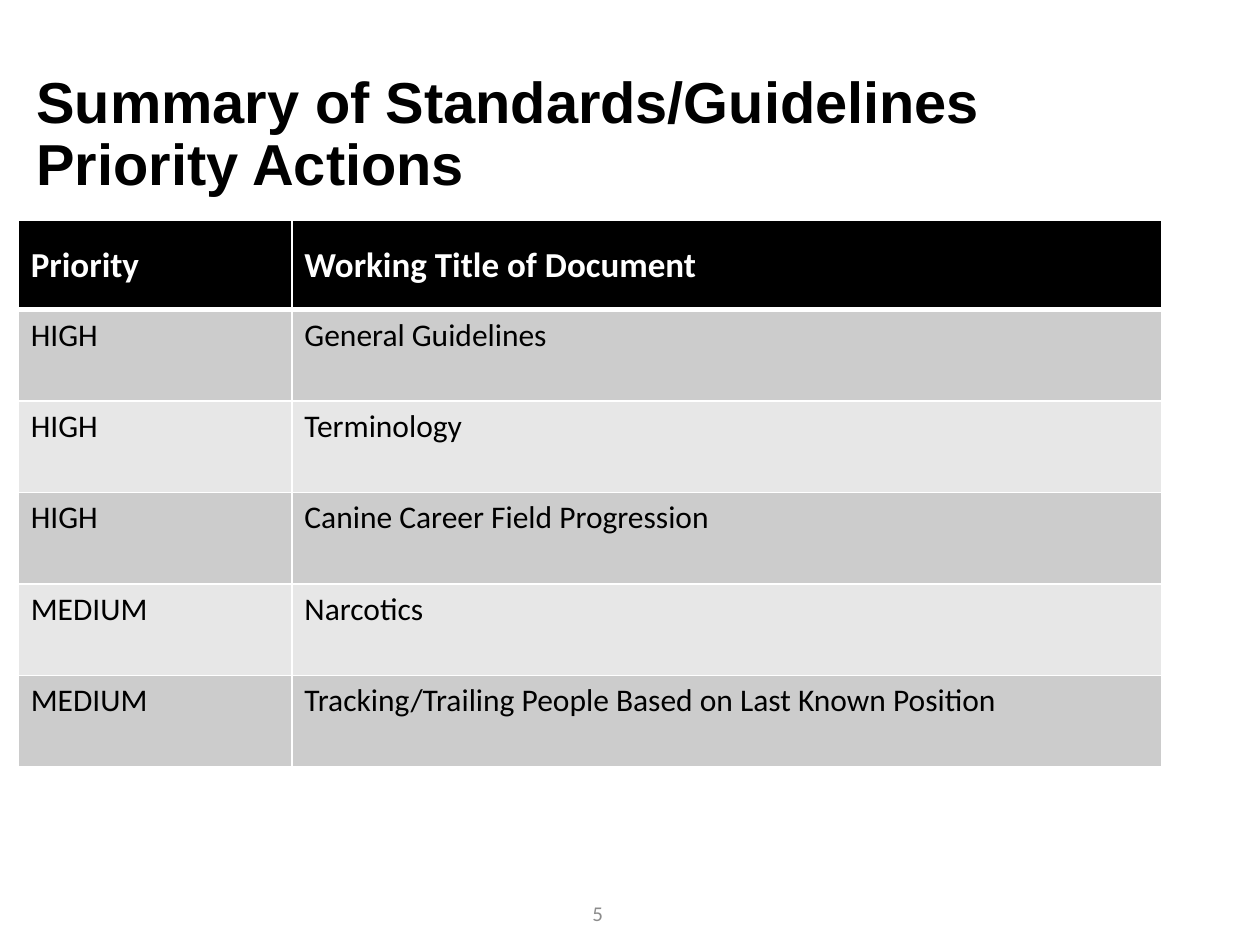
import pptx
import pptx.dml.color
import pptx.enum.text
import pptx.oxml
import pptx.oxml.ns
import pptx.util

Pt = pptx.util.Pt
ALIGN = pptx.enum.text.PP_ALIGN
ANCHOR = pptx.enum.text.MSO_ANCHOR

HEADER = ("Priority", "Working Title of Document")
ACTIONS = [
    ("HIGH", "General Guidelines"),
    ("HIGH", "Terminology"),
    ("HIGH", "Canine Career Field Progression"),
    ("MEDIUM", "Narcotics"),
    ("MEDIUM", "Tracking/Trailing People Based on Last Known Position"),
]
COLUMN_WIDTHS = (156.4, 496.8)
HEADER_HEIGHT, ROW_HEIGHT = 51, 52.25
BANDS = ("CCCCCC", "E7E7E7")


def color(value):
    return pptx.dml.color.RGBColor.from_string(value)


def write(frame, text, *, size, font="Calibri", fill="000000", bold=False,
          align=ALIGN.LEFT, spacing=None):
    para = frame.paragraphs[0]
    para.alignment = align
    para.line_spacing = spacing
    span = para.add_run()
    span.text = text
    span.font.name = font
    span.font.size = Pt(size)
    span.font.bold = bold
    span.font.color.rgb = color(fill)


def add_text(page, left, top, width, height, text, **style):
    box = page.shapes.add_textbox(Pt(left), Pt(top), Pt(width), Pt(height))
    frame = box.text_frame
    frame.word_wrap = True
    frame.vertical_anchor = ANCHOR.MIDDLE
    write(frame, text, **style)


def set_borders(cell, top=1, bottom=1):
    """Draw white borders of the given point widths, 1 pt at the sides."""
    properties = cell._tc.get_or_add_tcPr()
    for side, width in (("L", 1), ("R", 1), ("T", top), ("B", bottom)):
        properties.append(pptx.oxml.parse_xml(
            f'<a:ln{side} {pptx.oxml.ns.nsdecls("a")} w="{Pt(width)}">'
            f'<a:solidFill><a:srgbClr val="FFFFFF"/></a:solidFill></a:ln{side}>'))


def fill_cell(cell, text, background, **style):
    cell.fill.solid()
    cell.fill.fore_color.rgb = color(background)
    write(cell.text_frame, text, **style)


def add_actions_table(page, left, top):
    height = HEADER_HEIGHT + ROW_HEIGHT * len(ACTIONS)
    table = page.shapes.add_table(
        len(ACTIONS) + 1, len(HEADER), Pt(left), Pt(top),
        Pt(sum(COLUMN_WIDTHS)), Pt(height)).table
    for column, width in zip(table.columns, COLUMN_WIDTHS):
        column.width = Pt(width)
    for row in table.rows:
        row.height = Pt(ROW_HEIGHT)
    table.rows[0].height = Pt(HEADER_HEIGHT)

    for column, text in enumerate(HEADER):
        cell = table.cell(0, column)
        cell.vertical_anchor = ANCHOR.MIDDLE
        set_borders(cell, bottom=3)
        fill_cell(cell, text, "000000", size=20, fill="FFFFFF", bold=True)
    for row, action in enumerate(ACTIONS, start=1):
        for column, text in enumerate(action):
            cell = table.cell(row, column)
            set_borders(cell, top=3 if row == 1 else 1)
            fill_cell(cell, text, BANDS[(row - 1) % 2], size=18)


def main():
    deck = pptx.Presentation()
    deck.slide_width, deck.slide_height = Pt(720), Pt(540)
    page = deck.slides.add_slide(deck.slide_layouts[6])
    add_text(page, 13.7, 25.2, 620.6, 104.4,
             "Summary of Standards/Guidelines Priority Actions",
             size=33, font="Arial", bold=True, spacing=0.9)
    add_actions_table(page, 10.4, 126)
    add_text(page, 260.6, 507.6, 162, 28.8, "5",
             size=12, fill="8C8C8C", align=ALIGN.CENTER)
    deck.save("out.pptx")


if __name__ == "__main__":
    main()
